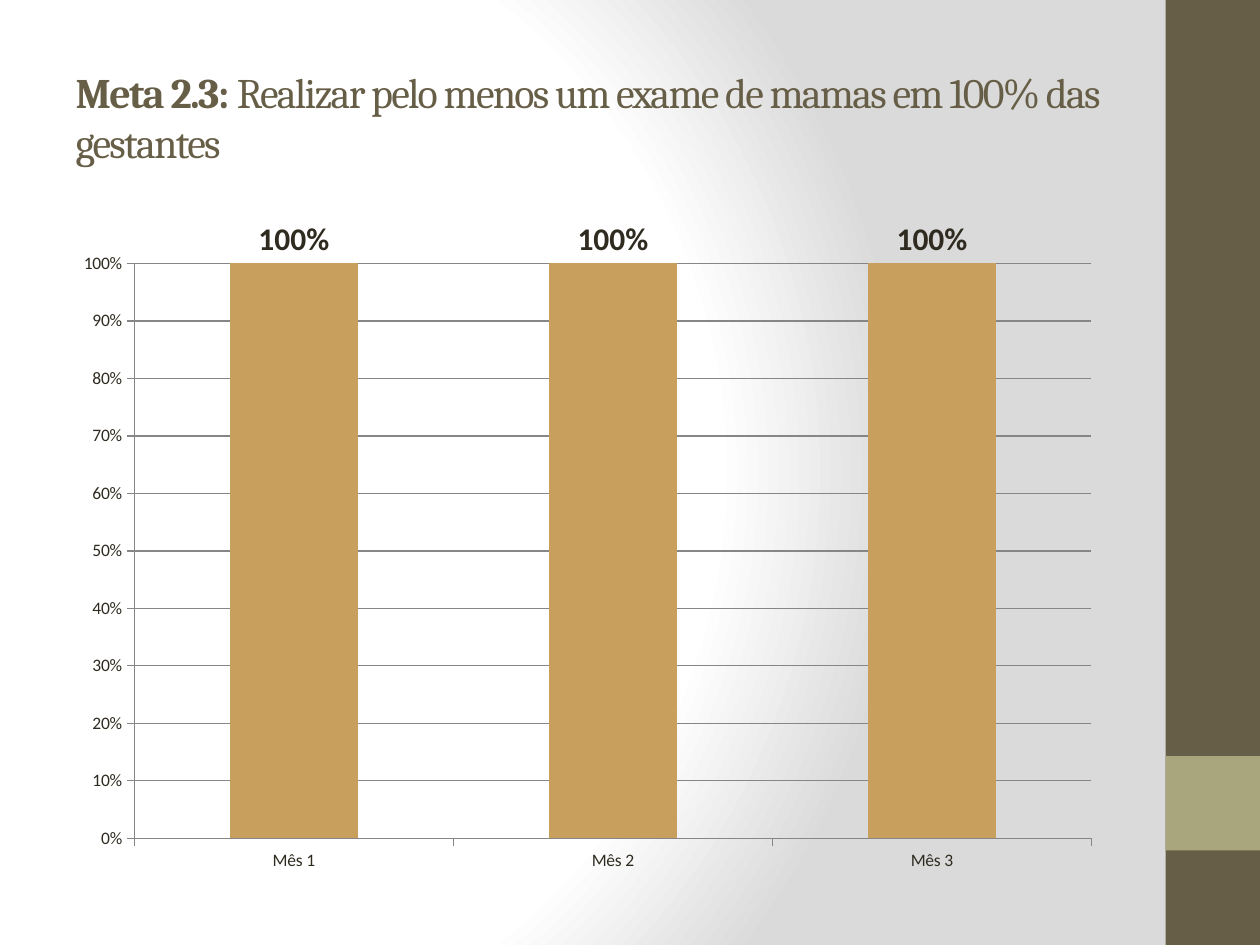
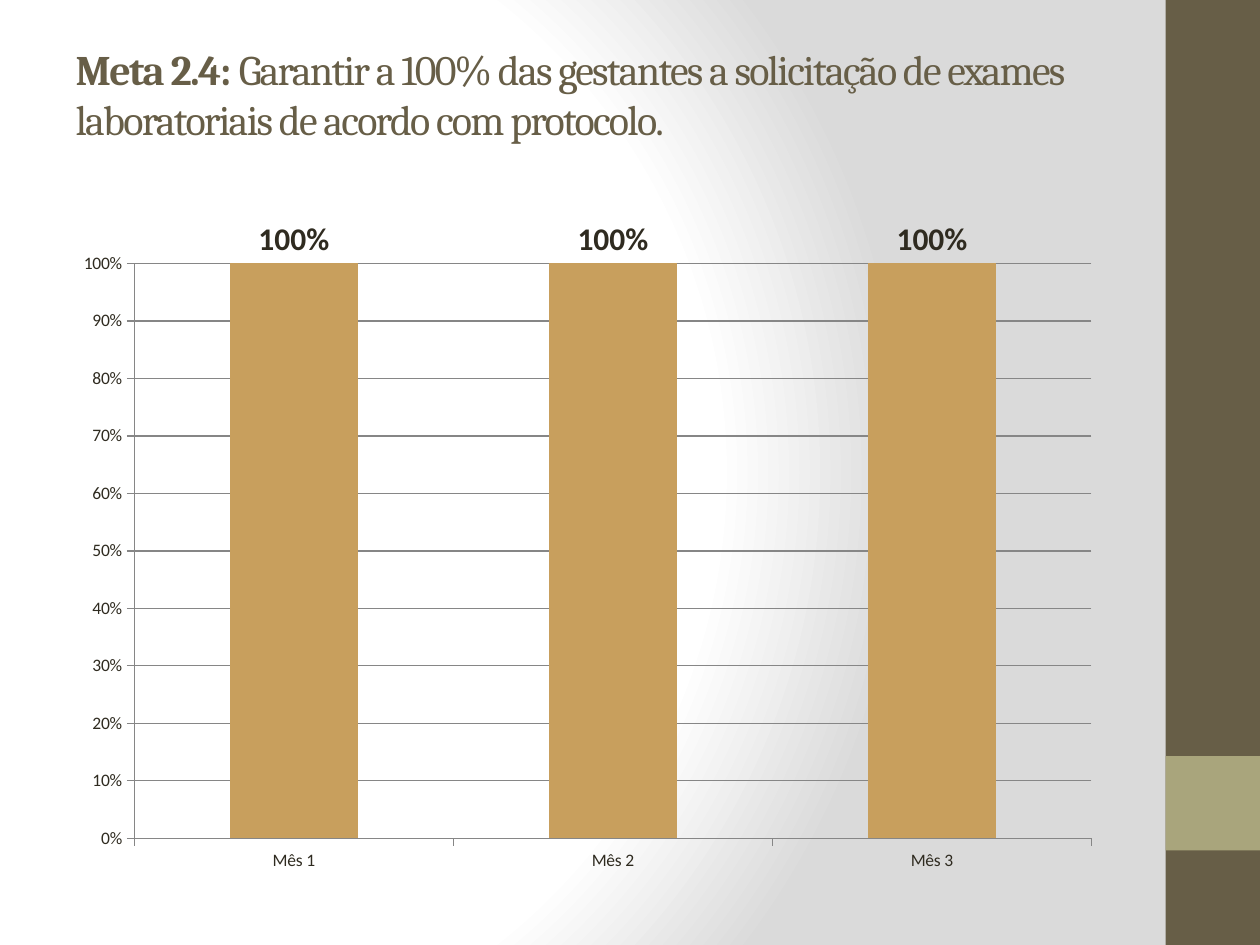
"""Builds two slides on prenatal care goals, each with a monthly column chart."""
from dataclasses import dataclass

from lxml import etree
from pptx import Presentation
from pptx.chart.data import CategoryChartData
from pptx.dml.color import RGBColor
from pptx.enum.chart import XL_CHART_TYPE, XL_LABEL_POSITION, XL_TICK_MARK
from pptx.enum.shapes import MSO_SHAPE
from pptx.enum.text import MSO_ANCHOR, MSO_AUTO_SIZE, PP_ALIGN
from pptx.oxml import parse_xml
from pptx.oxml.ns import qn
from pptx.util import Inches, Pt

COLUMN = XL_CHART_TYPE.COLUMN_CLUSTERED
OUTSIDE_END = XL_LABEL_POSITION.OUTSIDE_END
TICK_OUT = XL_TICK_MARK.OUTSIDE
RECT = MSO_SHAPE.RECTANGLE
MIDDLE = MSO_ANCHOR.MIDDLE
NO_FIT = MSO_AUTO_SIZE.NONE
LEFT = PP_ALIGN.LEFT


@dataclass(frozen=True)
class Theme:
    olive: str = "675E47"
    sage: str = "A9A57C"
    bar: str = "C89F5D"
    text: str = "2F2B20"
    grid: str = "868686"
    title_font: str = "Cambria"
    body_font: str = "Calibri"
    title_size: int = 24
    axis_size: int = 10
    label_size: int = 18


T = Theme()
MONTHS = ["Mês 1", "Mês 2", "Mês 3"]
GOALS = [
    {"label": "Meta 2.3: ",
     "text": "Realizar pelo menos um exame de mamas em 100% das gestantes",
     "values": [1, 1, 1], "insets": (0.05, 0.05)},
    {"label": "Meta 2.4: ",
     "text": "Garantir a 100% das gestantes a solicitação de exames "
             "laboratoriais de acordo com protocolo.",
     "values": [1, 1, 1], "insets": (0, 0.36)},
]
BANDS = [((9.25, 0, 0.75, 7.5), T.olive), ((9.25, 6, 0.75, 0.75), T.sage)]
TITLE_BOX = (0.5, 0.3, 8.33, 1.25)
CHART_BOX = (0.5, 1.75, 8.33, 5.25)
PLOT_LAYOUT = {"x": 0.068, "y": 0.063, "w": 0.912, "h": 0.871}
GRADIENT = [(0, "FFFFFF"), (75, "FFFFFF"), (100, "DADADA")]


def rgb(value):
    return RGBColor.from_string(value)


def inches(box):
    return [Inches(v) for v in box]


def set_background(master):
    stops = "".join(f'<a:gs pos="{pos * 1000}"><a:srgbClr val="{color}"/></a:gs>'
                    for pos, color in GRADIENT)
    bg = parse_xml(
        '<p:bg xmlns:p="http://schemas.openxmlformats.org/presentationml/2006/main" '
        'xmlns:a="http://schemas.openxmlformats.org/drawingml/2006/main">'
        f'<p:bgPr><a:gradFill rotWithShape="1"><a:gsLst>{stops}</a:gsLst>'
        '<a:path path="circle"><a:fillToRect l="20000" t="50000" r="100000" b="50000"/>'
        '</a:path></a:gradFill><a:effectLst/></p:bgPr></p:bg>')
    c_sld = master.element.find(qn("p:cSld"))
    for old in c_sld.findall(qn("p:bg")):
        c_sld.remove(old)
    c_sld.insert(0, bg)


def add_master_bands(master, s):
    for i, (box, color) in enumerate(BANDS):
        band = s.shapes.add_shape(RECT, *inches(box))
        band.shadow.inherit = False
        band.fill.solid()
        band.fill.fore_color.rgb = rgb(color)
        band.line.fill.background()
        band.element.find(".//" + qn("p:cNvPr")).set("id", str(20 + i))
        master.shapes.element.insert(2 + i, band.element)


def set_title(s, goal):
    title = s.shapes.title
    title.left, title.top, title.width, title.height = inches(TITLE_BOX)
    tf = title.text_frame
    tf.word_wrap = True
    tf.auto_size = NO_FIT
    tf.vertical_anchor = MIDDLE
    tf.margin_top, tf.margin_bottom = inches(goal["insets"])
    p = tf.paragraphs[0]
    p.alignment = LEFT
    p.font.name = T.title_font
    p.font.size = Pt(T.title_size)
    p.font.color.rgb = rgb(T.olive)
    for text, bold in ((goal["label"], True), (goal["text"], False)):
        r = p.add_run()
        r.text = text
        r.font.bold = bold
        r.font.element.set("spc", "-100") if hasattr(r.font, "element") else \
            r._r.get_or_add_rPr().set("spc", "-100")


def set_plot_layout(chart):
    plot_area = chart.element.find(".//" + qn("c:plotArea"))
    for old in plot_area.findall(qn("c:layout")):
        plot_area.remove(old)
    layout = etree.Element(qn("c:layout"))
    manual = etree.SubElement(layout, qn("c:manualLayout"))
    settings = {"layoutTarget": "inner", "xMode": "edge", "yMode": "edge", **PLOT_LAYOUT}
    for tag, value in settings.items():
        etree.SubElement(manual, qn(f"c:{tag}")).set("val", str(value))
    plot_area.insert(0, layout)


def add_goal_chart(s, values):
    data = CategoryChartData(number_format="0%")
    data.categories = MONTHS
    data.add_series("Series 1", values)
    chart = s.shapes.add_chart(COLUMN, *inches(CHART_BOX), data).chart
    chart.has_legend = False
    chart.has_title = False
    chart.font.name = T.body_font
    chart.font.size = Pt(T.axis_size)
    chart.font.color.rgb = rgb(T.text)

    cat_axis, val_axis = chart.category_axis, chart.value_axis
    val_axis.minimum_scale, val_axis.maximum_scale, val_axis.major_unit = 0, 1, 0.1
    val_axis.has_major_gridlines = True
    val_axis.tick_labels.number_format = "0%"
    val_axis.tick_labels.number_format_is_linked = False
    for axis in (cat_axis, val_axis):
        axis.major_tick_mark = TICK_OUT
    for part in (cat_axis, val_axis, val_axis.major_gridlines):
        part.format.line.color.rgb = rgb(T.grid)
        part.format.line.width = Pt(0.75)

    plot = chart.plots[0]
    plot.gap_width = 150
    plot.vary_by_categories = False
    fill = plot.series[0].format.fill
    fill.solid()
    fill.fore_color.rgb = rgb(T.bar)
    plot.has_data_labels = True
    labels = plot.data_labels
    labels.show_value = True
    labels.position = OUTSIDE_END
    labels.number_format = "0%"
    labels.number_format_is_linked = False
    labels.font.size = Pt(T.label_size)
    labels.font.bold = True
    labels.font.name = T.body_font
    labels.font.color.rgb = rgb(T.text)
    set_plot_layout(chart)


def main():
    prs = Presentation()
    prs.slide_width, prs.slide_height = Inches(10), Inches(7.5)
    master = prs.slide_master
    set_background(master)
    slides = [prs.slides.add_slide(prs.slide_layouts[5]) for _ in GOALS]
    add_master_bands(master, slides[0])
    for s, goal in zip(slides, GOALS):
        set_title(s, goal)
        add_goal_chart(s, goal["values"])
    prs.save("out.pptx")


if __name__ == "__main__":
    main()
